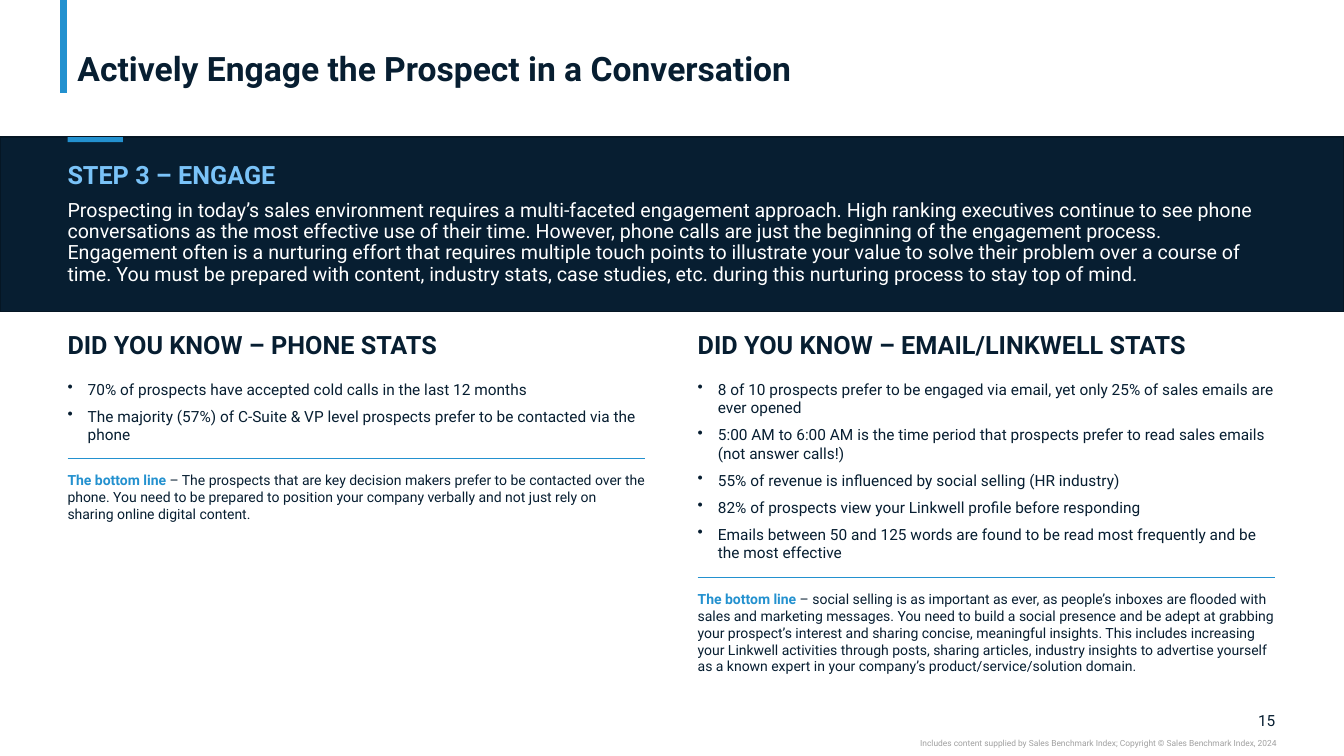
from dataclasses import dataclass

import lxml.etree
import pptx
import pptx.dml.color
import pptx.enum.shapes
import pptx.enum.text
import pptx.oxml.ns
import pptx.shapes.autoshape
import pptx.slide
import pptx.text.text
import pptx.util

Inches = pptx.util.Inches
Anchor = pptx.enum.text.MSO_ANCHOR
Align = pptx.enum.text.PP_ALIGN


@dataclass(frozen=True)
class Theme:
    font: str = "Roboto"
    navy: str = "071E31"
    navy_edge: str = "051624"
    blue: str = "2391CF"
    sky: str = "7AC3F8"
    white: str = "FFFFFF"
    grey: str = "A0A0A0"
    title_size: int = 24
    heading_size: int = 18
    intro_size: int = 14
    bullet_size: int = 11
    bottom_line_size: int = 10
    credit_size: int = 6


@dataclass(frozen=True)
class Box:
    left: float
    top: float
    width: float
    height: float


@dataclass(frozen=True)
class TextStyle:
    size: int
    color: str = "071E31"
    bold: bool = False
    anchor: Anchor = Anchor.TOP
    align: Align = Align.LEFT
    line_spacing: float = 1.0
    side_inset: float = 0


@dataclass(frozen=True)
class StatsColumn:
    left: float
    heading: str
    bullets: list[str]
    bullets_height: float
    rule_top: float
    bottom_line: str
    bottom_line_height: float


THEME = Theme()
MARGIN = 0.67
COLUMN_WIDTH = 5.73
TITLE = TextStyle(THEME.title_size, THEME.navy, True, Anchor.BOTTOM, line_spacing=0.9, side_inset=0.1)
HEADING = TextStyle(THEME.heading_size, THEME.navy, True, Anchor.MIDDLE, line_spacing=0.9)
STEP_HEADING = TextStyle(THEME.heading_size, THEME.sky, True, Anchor.MIDDLE, line_spacing=0.9)
INTRO = TextStyle(THEME.intro_size, THEME.white, line_spacing=0.9)
BULLET = TextStyle(THEME.bullet_size, THEME.navy)
BOTTOM_LINE_LABEL = TextStyle(THEME.bottom_line_size, THEME.blue, True)
BOTTOM_LINE = TextStyle(THEME.bottom_line_size, THEME.navy)
PAGE_NUMBER = TextStyle(THEME.bullet_size, THEME.navy, anchor=Anchor.MIDDLE, align=Align.RIGHT)
CREDIT = TextStyle(THEME.credit_size, THEME.grey, align=Align.RIGHT)

INTRO_TEXT = (
    "Prospecting in today’s sales environment requires a multi-faceted engagement approach. "
    "High ranking executives continue to see phone conversations as the most effective use of their time. "
    "However, phone calls are just the beginning of the engagement process. Engagement often is a nurturing "
    "effort that requires multiple touch points to illustrate your value to solve their problem over a course "
    "of time. You must be prepared with content, industry stats, case studies, etc. during this nurturing "
    "process to stay top of mind."
)

COLUMNS = [
    StatsColumn(
        MARGIN,
        "DID YOU KNOW – PHONE STATS",
        [
            "70% of prospects have accepted cold calls in the last 12 months",
            "The majority (57%) of C-Suite & VP level prospects prefer to be contacted via the phone",
        ],
        0.64,
        4.55,
        "– The prospects that are key decision makers prefer to be contacted over the phone. You need to be "
        "prepared to position your company verbally and not just rely on sharing online digital content.",
        0.5,
    ),
    StatsColumn(
        6.92,
        "DID YOU KNOW – EMAIL/LINKWELL STATS",
        [
            "8 of 10 prospects prefer to be engaged via email, yet only 25% of sales emails are ever opened",
            "5:00 AM to 6:00 AM is the time period that prospects prefer to read sales emails (not answer calls!)",
            "55% of revenue is influenced by social selling (HR industry)",
            "82% of prospects view your Linkwell profile before responding",
            "Emails between 50 and 125 words are found to be read most frequently and be the most effective",
        ],
        1.82,
        5.73,
        "– social selling is as important as ever, as people’s inboxes are flooded with sales and marketing "
        "messages. You need to build a social presence and be adept at grabbing your prospect’s interest and "
        "sharing concise, meaningful insights. This includes increasing your Linkwell activities through posts, "
        "sharing articles, industry insights to advertise yourself as a known expert in your company’s "
        "product/service/solution domain.",
        0.84,
    ),
]


def rgb(color: str) -> pptx.dml.color.RGBColor:
    return pptx.dml.color.RGBColor.from_string(color)


def format_run(run: pptx.text.text._Run, style: TextStyle) -> None:
    run.font.name = THEME.font
    run.font.size = pptx.util.Pt(style.size)
    run.font.bold = style.bold
    run.font.color.rgb = rgb(style.color)


def add_text(slide: pptx.slide.Slide, box: Box, text: str, style: TextStyle) -> pptx.text.text.TextFrame:
    shape = slide.shapes.add_textbox(Inches(box.left), Inches(box.top), Inches(box.width), Inches(box.height))
    text_frame = shape.text_frame
    text_frame.word_wrap = True
    text_frame.vertical_anchor = style.anchor
    text_frame.margin_left = text_frame.margin_right = Inches(style.side_inset)
    text_frame.margin_top = text_frame.margin_bottom = 0
    text_frame.text = text
    for paragraph in text_frame.paragraphs:
        paragraph.alignment = style.align
        paragraph.line_spacing = style.line_spacing
        for run in paragraph.runs:
            format_run(run, style)
    return text_frame


def add_bullets(slide: pptx.slide.Slide, box: Box, bullets: list[str]) -> None:
    text_frame = add_text(slide, box, "\n".join(bullets), BULLET)
    for index, paragraph in enumerate(text_frame.paragraphs):
        properties = paragraph._p.get_or_add_pPr()
        properties.set("marL", str(Inches(0.2)))
        properties.set("indent", str(-Inches(0.2)))
        lxml.etree.SubElement(properties, pptx.oxml.ns.qn("a:buChar"), char="•")
        if index:
            paragraph.space_before = pptx.util.Pt(6)


def add_rectangle(slide: pptx.slide.Slide, box: Box, fill: str) -> pptx.shapes.autoshape.Shape:
    shape = slide.shapes.add_shape(
        pptx.enum.shapes.MSO_SHAPE.RECTANGLE,
        Inches(box.left), Inches(box.top), Inches(box.width), Inches(box.height),
    )
    shape.shadow.inherit = False
    shape.fill.solid()
    shape.fill.fore_color.rgb = rgb(fill)
    shape.line.fill.background()
    return shape


def add_line(slide: pptx.slide.Slide, start: tuple[float, float], end: tuple[float, float], width: float) -> None:
    connector = slide.shapes.add_connector(
        pptx.enum.shapes.MSO_CONNECTOR.STRAIGHT, *(Inches(value) for value in start + end)
    )
    connector.line.color.rgb = rgb(THEME.blue)
    connector.line.width = pptx.util.Pt(width)
    lxml.etree.SubElement(connector._element.spPr, pptx.oxml.ns.qn("a:effectLst"))


def add_column(slide: pptx.slide.Slide, column: StatsColumn) -> None:
    left, rule_top = column.left, column.rule_top
    add_text(slide, Box(left, 3.3, COLUMN_WIDTH, 0.27), column.heading, HEADING)
    add_bullets(slide, Box(left, 3.77, COLUMN_WIDTH, column.bullets_height), column.bullets)
    add_line(slide, (left, rule_top), (left + COLUMN_WIDTH, rule_top), 0.5)
    box = Box(left, rule_top + 0.13, COLUMN_WIDTH, column.bottom_line_height)
    text_frame = add_text(slide, box, "The bottom line ", BOTTOM_LINE_LABEL)
    run = text_frame.paragraphs[0].add_run()
    run.text = column.bottom_line
    format_run(run, BOTTOM_LINE)


def main() -> None:
    presentation = pptx.Presentation()
    presentation.slide_width = Inches(13.33)
    presentation.slide_height = Inches(7.5)
    slide = presentation.slides.add_slide(presentation.slide_layouts[6])

    add_line(slide, (0.63, 0), (0.63, 0.92), 5)
    add_text(slide, Box(MARGIN, 0.04, 11.99, 0.84), "Actively Engage the Prospect in a Conversation", TITLE)

    band = add_rectangle(slide, Box(0, 1.36, 13.33, 1.73), THEME.navy)
    band.line.color.rgb = rgb(THEME.navy_edge)
    band.line.width = pptx.util.Pt(1)
    add_rectangle(slide, Box(MARGIN, 1.36, 0.55, 0.05), THEME.blue)
    add_text(slide, Box(MARGIN, 1.61, 12, 0.27), "STEP 3 – ENGAGE", STEP_HEADING)
    add_text(slide, Box(MARGIN, 1.99, 12, 0.85), INTRO_TEXT, INTRO)

    for column in COLUMNS:
        add_column(slide, column)

    add_text(slide, Box(12.32, 7.05, 0.33, 0.19), "15", PAGE_NUMBER)
    add_text(
        slide,
        Box(7.5, 7.32, 5.16, 0.1),
        "Includes content supplied by Sales Benchmark Index; Copyright © Sales Benchmark Index, 2024",
        CREDIT,
    )
    presentation.save("out.pptx")


if __name__ == "__main__":
    main()
